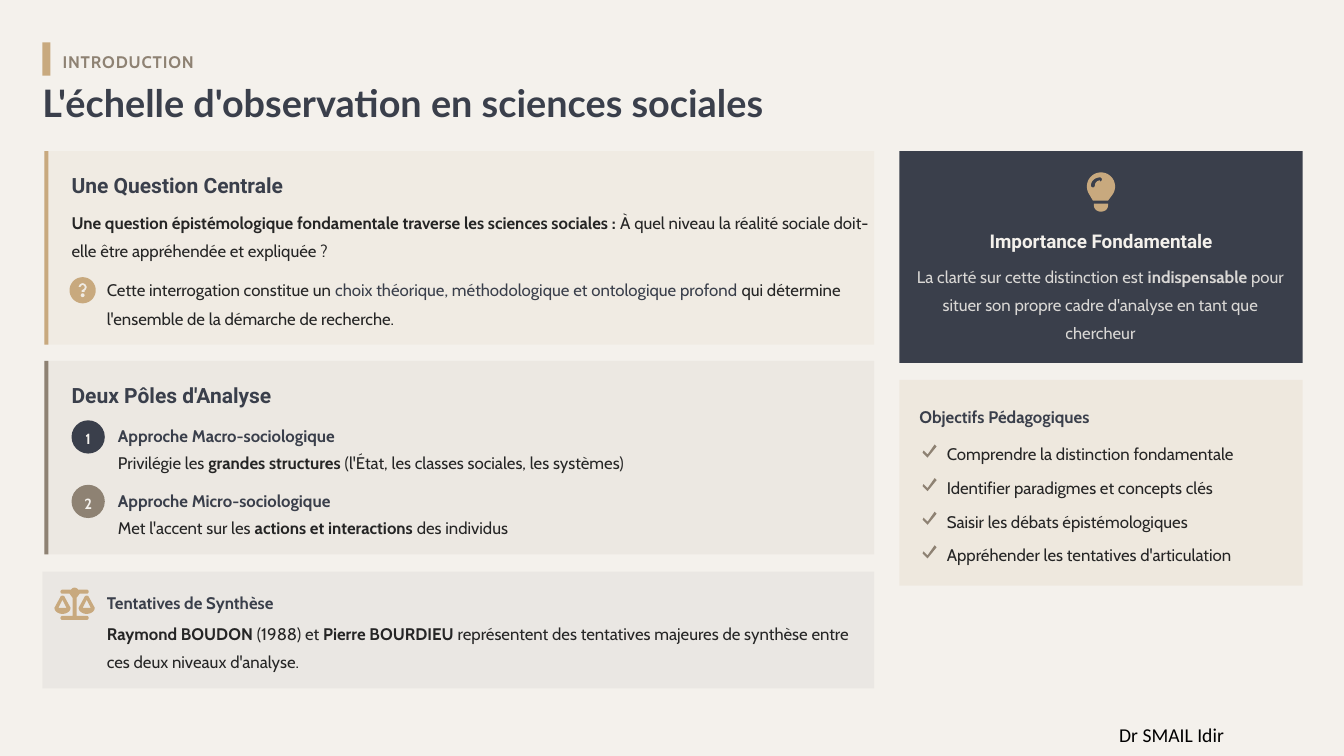
"""Build the introduction slide on the scale of observation in social sciences."""
from dataclasses import dataclass
from math import cos, radians, sin

from lxml.etree import SubElement
from pptx import Presentation
from pptx.dml.color import RGBColor
from pptx.enum.shapes import MSO_SHAPE
from pptx.enum.text import MSO_ANCHOR, PP_ALIGN
from pptx.oxml.ns import qn
from pptx.shapes.autoshape import Shape
from pptx.slide import Slide
from pptx.text.text import TextFrame
from pptx.util import Inches, Pt

Point = tuple[float, float]
Contour = list[Point]


@dataclass(frozen=True)
class Theme:
    """Colours, fonts and type sizes of the slide."""
    paper: str = "F4F1EC"
    gold: str = "C8A97E"
    taupe: str = "8E8273"
    slate: str = "3A3F4B"
    ink: str = "252525"
    black: str = "000000"
    body_font: str = "Cabin"
    heading_font: str = "Roboto"
    title_font: str = "Lato"
    footer_font: str = "Calibri"
    badge: float = 10.5
    body: float = 12
    callout: float = 13.5
    footer: float = 14
    heading: float = 15
    title: float = 27


THEME = Theme()


@dataclass(frozen=True)
class Area:
    """A rectangle in inches."""
    left: float
    top: float
    width: float
    height: float

    def lengths(self) -> tuple[Inches, ...]:
        """Return the four measures as slide lengths."""
        return tuple(Inches(n) for n in (self.left, self.top, self.width, self.height))


@dataclass(frozen=True)
class Panel:
    """A filled rectangle behind a group of texts."""
    area: Area
    color: str
    opacity: int = 100


@dataclass(frozen=True)
class Section:
    """A tinted panel with a coloured edge and a heading."""
    top: float
    color: str
    heading: str


@dataclass(frozen=True)
class Pole:
    """A numbered approach."""
    number: str
    top: float
    color: str
    name: str
    summary: str


PANELS = (
    Panel(Area(0.42, 0.42, 0.08, 0.33), THEME.gold),
    Panel(Area(0.42, 5.67, 8.25, 1.16), THEME.slate, 5),
    Panel(Area(8.92, 1.5, 4, 2.1), THEME.slate),
    Panel(Area(8.92, 3.77, 4, 2.04), THEME.gold, 12),
)
SECTIONS = (
    Section(1.5, THEME.gold, "Une Question Centrale"),
    Section(3.58, THEME.taupe, "Deux Pôles d'Analyse"),
)
POLES = (
    Pole("1", 4.17, THEME.slate, "Approche Macro-sociologique",
         "Privilégie les *grandes structures* (l'État, les classes sociales, les systèmes)"),
    Pole("2", 4.81, THEME.taupe, "Approche Micro-sociologique",
         "Met l'accent sur les *actions et interactions* des individus"),
)
GOALS = (
    "Comprendre la distinction fondamentale",
    "Identifier paradigmes et concepts clés",
    "Saisir les débats épistémologiques",
    "Appréhender les tentatives d'articulation",
)


def fade(element, opacity: int) -> None:
    """Give every plain colour in the element an opacity in percent."""
    for color in element.iter(qn("a:srgbClr")):
        SubElement(color, qn("a:alpha")).set("val", str(opacity * 1000))


def paint(shape: Shape, color: str, opacity: int = 100) -> None:
    """Fill a shape and remove its outline and shadow."""
    shape.shadow.inherit = False
    shape.fill.solid()
    shape.fill.fore_color.rgb = RGBColor.from_string(color)
    shape.line.fill.background()
    if opacity < 100:
        fade(shape.fill._xPr, opacity)


def draw_panel(page: Slide, panel: Panel, kind: MSO_SHAPE = MSO_SHAPE.RECTANGLE) -> Shape:
    """Draw a panel and return its shape."""
    shape = page.shapes.add_shape(kind, *panel.area.lengths())
    paint(shape, panel.color, panel.opacity)
    return shape


def write(frame: TextFrame, text: str, *, size: float = THEME.body,
          font: str = THEME.body_font, color: str = THEME.ink, accent: str = "",
          bold: bool = False, spacing: float = 1.3, centered: bool = False,
          tracking: float = 0, opacity: int = 100) -> None:
    """Write one paragraph; parts between asterisks take the accent or bold."""
    frame.word_wrap = True
    frame.vertical_anchor = MSO_ANCHOR.MIDDLE
    frame.margin_left = frame.margin_top = frame.margin_right = frame.margin_bottom = 0
    para = frame.paragraphs[0]
    para.line_spacing = spacing
    para.alignment = PP_ALIGN.CENTER if centered else PP_ALIGN.LEFT
    for index, piece in enumerate(text.split("*")):
        if not piece:
            continue
        marked = index % 2 == 1
        span = para.add_run()
        span.text = piece
        span.font.name = font
        span.font.size = Pt(size)
        span.font.bold = bold or (marked and not accent)
        span.font.color.rgb = RGBColor.from_string(accent if marked and accent else color)
        if tracking:
            span.font._element.set("spc", str(round(tracking * 100)))
        if opacity < 100:
            fade(span.font._element, opacity)


def add_text(page: Slide, area: Area, text: str, **style) -> None:
    """Add a text box holding one formatted paragraph."""
    box = page.shapes.add_textbox(*area.lengths())
    write(box.text_frame, text, **style)


def arc(x: float, y: float, wide: float, high: float, start: int, end: int) -> Contour:
    """Return points along an elliptical arc, with angles in degrees."""
    steps = max(abs(end - start) // 10, 1)
    angles = [radians(start + (end - start) * n / steps) for n in range(steps + 1)]
    return [(x + wide * cos(a), y + high * sin(a)) for a in angles]


def draw_icon(page: Slide, color: str, *contours: Contour) -> None:
    """Draw closed contours as one shape, inner contours being holes."""
    outlines = [[(Inches(x), Inches(y)) for x, y in contour] for contour in contours]
    builder = page.shapes.build_freeform(*outlines[0][0])
    for index, outline in enumerate(outlines):
        if index:
            builder.move_to(*outline[0])
        builder.add_line_segments(outline[1:], close=True)
    paint(builder.convert_to_shape(), color)


def draw_question(page: Slide) -> None:
    """Draw the question mark disc."""
    hook = arc(0.82, 2.85, 0.04, 0.04, 180, 420) + [(0.84, 2.9), (0.81, 2.9), (0.81, 2.88)]
    draw_icon(page, THEME.gold, arc(0.82, 2.88, 0.13, 0.13, 0, 360),
              hook + arc(0.82, 2.85, 0.02, 0.02, 420, 180), arc(0.82, 2.93, 0.02, 0.02, 0, 360))


def draw_scales(page: Slide) -> None:
    """Draw the balance with its two pans."""
    stand = (arc(0.74, 5.87, 0.04, 0.04, 210, 330) + arc(0.86, 5.87, 0.02, 0.02, 270, 450)
             + [(0.79, 5.89), (0.76, 5.93), (0.76, 6.11)]
             + arc(0.86, 6.13, 0.02, 0.02, 270, 450) + arc(0.62, 6.13, 0.02, 0.02, 90, 270)
             + [(0.72, 6.11), (0.72, 5.93), (0.69, 5.89)] + arc(0.62, 5.87, 0.02, 0.02, 90, 270))
    pans = []
    for x in (0.62, 0.86):
        pans.append(arc(x, 6.03, 0.08, 0.06, 0, 180) + arc(x, 5.92, 0.02, 0.01, 180, 360))
        pans.append([(x - 0.04, 6.03), (x, 5.95), (x + 0.04, 6.03)])
    draw_icon(page, THEME.gold, stand, *pans)


def draw_bulb(page: Slide) -> None:
    """Draw the light bulb."""
    glass = arc(10.92, 1.85, 0.14, 0.14, 145, 395) + [(10.99, 1.99), (10.84, 1.99)]
    base = [(10.85, 2.02), (10.99, 2.02)] + arc(10.92, 2.04, 0.07, 0.06, 0, 180)
    shine = (arc(10.91, 1.84, 0.09, 0.08, 180, 270) + arc(10.91, 1.78, 0.02, 0.02, 270, 450)
             + arc(10.91, 1.84, 0.05, 0.05, 270, 180) + arc(10.84, 1.84, 0.02, 0.02, 0, 180))
    draw_icon(page, THEME.gold, glass, base, shine)


def draw_section(page: Slide, section: Section) -> None:
    """Draw a section panel, its edge and its heading."""
    draw_panel(page, Panel(Area(0.44, section.top, 8.23, 1.92), section.color, 8))
    draw_panel(page, Panel(Area(0.44, section.top, 0.04, 1.92), section.color))
    add_text(page, Area(0.71, section.top + 0.17, 8.06, 0.29), section.heading, bold=True,
             size=THEME.heading, font=THEME.heading_font, color=THEME.slate, spacing=1.2)


def draw_pole(page: Slide, pole: Pole) -> None:
    """Draw a numbered badge with its name and summary."""
    badge = draw_panel(page, Panel(Area(0.71, pole.top, 0.33, 0.33), pole.color), MSO_SHAPE.OVAL)
    write(badge.text_frame, pole.number, size=THEME.badge, color=THEME.paper, bold=True,
          spacing=1.2, centered=True)
    add_text(page, Area(1.17, pole.top, 5.28, 0.25), pole.name, color=THEME.slate, bold=True)
    add_text(page, Area(1.17, pole.top + 0.25, 5.28, 0.27), pole.summary, spacing=1.4)


def draw_goal(page: Slide, text: str, top: float) -> None:
    """Draw a ticked goal."""
    tick = [(9.27, 0.06), (9.29, 0.08), (9.2, 0.19), (9.15, 0.14), (9.16, 0.12), (9.2, 0.16)]
    draw_icon(page, THEME.taupe, [(x, top + y) for x, y in tick])
    add_text(page, Area(9.39, top, 2.99, 0.25), text)


def main() -> None:
    """Build and save the deck."""
    deck = Presentation()
    deck.slide_width, deck.slide_height = Inches(13.33), Inches(7.5)
    page = deck.slides.add_slide(deck.slide_layouts[6])
    page.background.fill.solid()
    page.background.fill.fore_color.rgb = RGBColor.from_string(THEME.paper)
    for panel in PANELS:
        draw_panel(page, panel)
    add_text(page, Area(0.62, 0.46, 1.38, 0.25), "INTRODUCTION", color=THEME.taupe,
             bold=True, tracking=0.6)
    add_text(page, Area(0.42, 0.83, 12.69, 0.42), "L'échelle d'observation en sciences sociales",
             size=THEME.title, font=THEME.title_font, color=THEME.slate, bold=True, spacing=0.9)
    for section in SECTIONS:
        draw_section(page, section)
    add_text(page, Area(0.71, 2.04, 8.04, 0.54),
             "*Une question épistémologique fondamentale traverse les sciences sociales :* "
             "À quel niveau la réalité sociale doit-elle être appréhendée et expliquée ?", spacing=1.4)
    draw_question(page)
    add_text(page, Area(1.06, 2.71, 7.69, 0.54),
             "Cette interrogation constitue un *choix théorique, méthodologique et ontologique "
             "profond *qui détermine l'ensemble de la démarche de recherche.",
             accent=THEME.slate, spacing=1.4)
    for pole in POLES:
        draw_pole(page, pole)
    draw_scales(page)
    add_text(page, Area(1.06, 5.83, 7.52, 0.25), "Tentatives de Synthèse",
             color=THEME.slate, bold=True)
    add_text(page, Area(1.06, 6.12, 7.52, 0.54),
             "*Raymond BOUDON* (1988) et *Pierre BOURDIEU* représentent des tentatives majeures "
             "de synthèse entre ces deux niveaux d'analyse.", spacing=1.4)
    draw_bulb(page)
    add_text(page, Area(9.08, 2.21, 3.68, 0.29), "Importance Fondamentale", size=THEME.callout,
             font=THEME.heading_font, color=THEME.paper, bold=True, centered=True)
    add_text(page, Area(9.08, 2.58, 3.67, 0.81),
             "La clarté sur cette distinction est *indispensable* pour situer son propre cadre "
             "d'analyse en tant que chercheur", color=THEME.paper, opacity=85, spacing=1.4,
             centered=True)
    add_text(page, Area(9.12, 3.98, 3.67, 0.25), "Objectifs Pédagogiques",
             color=THEME.slate, bold=True)
    for index, goal in enumerate(GOALS):
        draw_goal(page, goal, 4.35 + index / 3)
    add_text(page, Area(11.1, 7.11, 1.91, 0.29), "Dr SMAIL Idir", size=THEME.footer,
             font=THEME.footer_font, color=THEME.black)
    deck.save("out.pptx")


if __name__ == "__main__":
    main()
